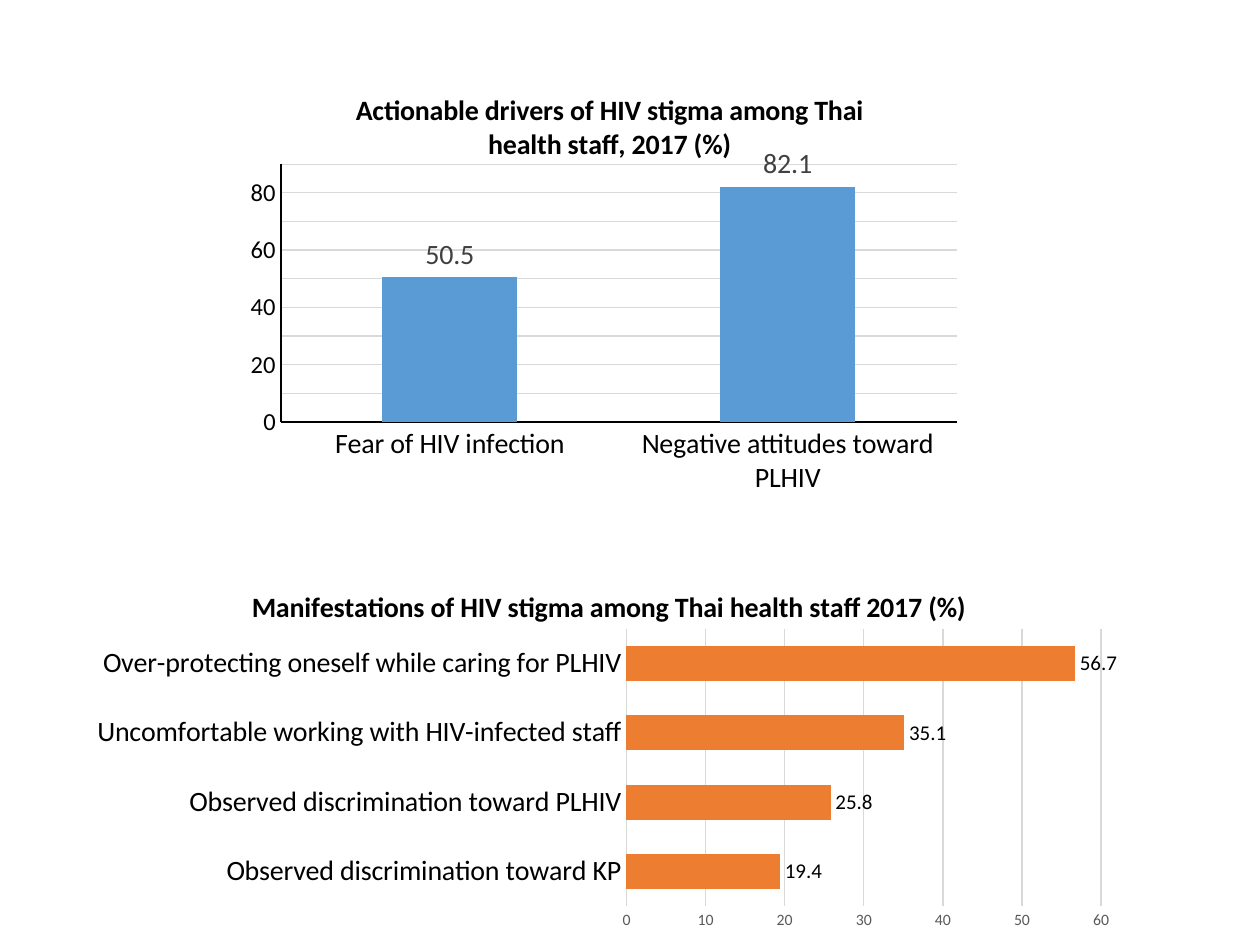
from lxml.etree import SubElement
from pptx import Presentation
from pptx.chart.data import CategoryChartData
from pptx.dml.color import RGBColor
from pptx.enum.chart import XL_CHART_TYPE, XL_LABEL_POSITION, XL_TICK_MARK
from pptx.oxml import parse_xml
from pptx.oxml.ns import nsdecls, qn
from pptx.util import Inches, Pt

FONT = "Calibri"
BLACK = RGBColor(0x00, 0x00, 0x00)
DARK = RGBColor(0x40, 0x40, 0x40)
GREY = RGBColor(0x59, 0x59, 0x59)
PALE = RGBColor(0xD9, 0xD9, 0xD9)
BLUE = RGBColor(0x5B, 0x9B, 0xD5)
ORANGE = RGBColor(0xED, 0x7D, 0x31)

# Boxes are in inches; title and plot places are shares of the chart's size.
CHARTS = [
    dict(
        kind=XL_CHART_TYPE.COLUMN_CLUSTERED, box=(1.88, 0.47, 5.83, 3.53),
        title="Actionable drivers of HIV stigma among Thai health staff, 2017 (%)",
        data=[("Fear of HIV infection", 50.5),
              ("Negative attitudes toward PLHIV", 82.1)],
        color=BLUE, gap=150, overlap=-27, top=90, number_format="#,##0",
        title_at=(0.155, 0.06), plot_at=(0.06, 0.236, 0.92, 0.58),
        labels=(16, DARK), values=(14, BLACK),
        cat_line=BLACK, val_line=BLACK,
    ),
    dict(
        kind=XL_CHART_TYPE.BAR_CLUSTERED, box=(0.62, 4.45, 8.37, 3),
        title="Manifestations of HIV stigma among Thai health staff 2017 (%)",
        data=[("Observed discrimination toward KP", 19.4),
              ("Observed discrimination toward PLHIV", 25.8),
              ("Uncomfortable working with HIV-infected staff", 35.1),
              ("Over-protecting oneself while caring for PLHIV", 56.7)],
        color=ORANGE, gap=100, overlap=0, top=60, number_format="General",
        title_at=(0.16, 0.06), plot_at=(0.52, 0.18, 0.45, 0.735),
        labels=(12, BLACK), values=(9, GREY),
        cat_line=PALE, val_line=None,
    ),
]


def set_font(font, size, color=BLACK, bold=False):
    font.name, font.size, font.bold = FONT, Pt(size), bold
    font.color.rgb = color


def set_line(line, color):
    if color is None:
        line.fill.background()
    else:
        line.color.rgb = color
        line.width = Pt(0.75)


def place(parent, shares, inner=False):
    """Give a chart title or plot area a fixed place inside its chart."""
    layout = parent.find(qn("c:layout"))
    if layout is None:
        layout = parse_xml(f"<c:layout {nsdecls('c')}/>")
        parent.insert(0, layout)
    manual = SubElement(layout, qn("c:manualLayout"))
    settings = [("layoutTarget", "inner")] if inner else []
    settings += [("xMode", "edge"), ("yMode", "edge")]
    settings += zip("xywh", shares)
    for tag, value in settings:
        SubElement(manual, qn(f"c:{tag}")).set("val", str(value))


def set_title(chart, text, at):
    chart.has_title = True
    title = chart.chart_title
    r = title.text_frame.paragraphs[0].add_run()
    r.text = text
    set_font(r.font, 16, bold=True)
    place(title.element, at)


def set_axis(axis, size, color, line):
    axis.major_tick_mark = axis.minor_tick_mark = XL_TICK_MARK.NONE
    set_font(axis.tick_labels.font, size, color)
    set_line(axis.format.line, line)


def add_bars(s, c):
    data = CategoryChartData()
    data.categories = [name for name, _ in c["data"]]
    data.add_series("Series 1", [value for _, value in c["data"]])
    chart = s.shapes.add_chart(c["kind"], *map(Inches, c["box"]), data).chart
    set_font(chart.font, 10)
    chart.has_legend = False
    set_title(chart, c["title"], c["title_at"])
    place(chart.element.find(f".//{qn('c:plotArea')}"), c["plot_at"], inner=True)

    set_axis(chart.category_axis, 16, BLACK, c["cat_line"])
    axis = chart.value_axis
    set_axis(axis, *c["values"], c["val_line"])
    axis.minimum_scale, axis.maximum_scale, axis.major_unit = 0, c["top"], 10
    axis.tick_labels.number_format = c["number_format"]
    axis.tick_labels.number_format_is_linked = False
    axis.has_major_gridlines = True
    set_line(axis.major_gridlines.format.line, PALE)

    plot = chart.plots[0]
    plot.vary_by_categories = False
    plot.gap_width, plot.overlap = c["gap"], c["overlap"]
    series = plot.series[0]
    series.format.fill.solid()
    series.format.fill.fore_color.rgb = c["color"]
    labels = series.data_labels
    labels.show_value = True
    labels.position = XL_LABEL_POSITION.OUTSIDE_END
    set_font(labels.font, *c["labels"])


def main():
    prs = Presentation()
    prs.slide_width, prs.slide_height = Inches(10), Inches(7.5)
    s = prs.slides.add_slide(prs.slide_layouts[6])
    for c in CHARTS:
        add_bars(s, c)
    prs.save("out.pptx")


if __name__ == "__main__":
    main()
